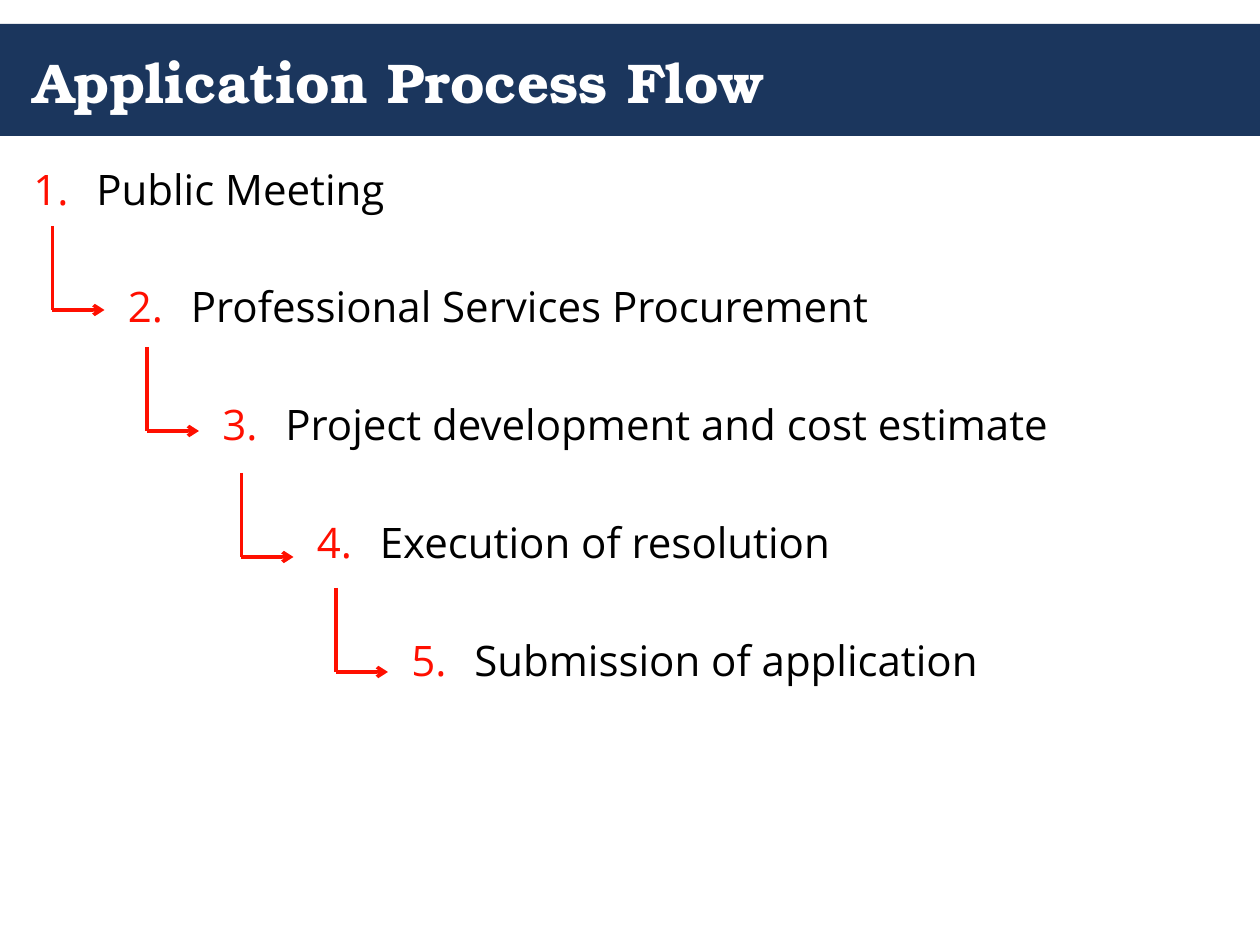
from lxml import etree
from pptx import Presentation
from pptx import util as u
from pptx.dml.color import RGBColor
from pptx.enum import shapes, text
from pptx.oxml.ns import qn

TITLE = "Application Process Flow"
STEPS = [
    "Public Meeting",
    "Professional Services Procurement",
    "Project development and cost estimate",
    "Execution of resolution",
    "Submission of application",
]
TOPS = [226, 347, 473, 588]
NAVY, RED, WHITE, BLACK = "1B365D", "FF0F00", "FFFFFF", "000000"
WIDE, HIGH = 1260, 945
STEP = 94.5
LEFT, HANG = 52.5, 63
DROP, REACH = 84, 52


def px(n):
    return u.Emu(round(n * 9144000 / WIDE))


def color(code):
    return RGBColor.from_string(code)


def add_box(slide, x, y, w, h):
    frame = slide.shapes.add_textbox(px(x), px(y), px(w), px(h)).text_frame
    frame.word_wrap = True
    return frame


def add_run(para, words, face, size, code, bold=False):
    run = para.add_run()
    run.text = words
    font = run.font
    font.name, font.size, font.bold = face, u.Pt(size), bold
    font.color.rgb = color(code)


def number(para, indent):
    props = para._p.get_or_add_pPr()
    props.set("marL", str(px(indent)))
    props.set("indent", str(-px(HANG)))
    tint = etree.SubElement(props, qn("a:buClr"))
    etree.SubElement(tint, qn("a:srgbClr"), val=RED)
    etree.SubElement(props, qn("a:buFont"), typeface="+mj-lt")
    etree.SubElement(props, qn("a:buAutoNum"), type="arabicPeriod")


def add_line(group, x1, y1, x2, y2, arrow=False):
    line = group.shapes.add_connector(
        shapes.MSO_CONNECTOR.STRAIGHT, px(x1), px(y1), px(x2), px(y2))
    line.line.color.rgb = color(RED)
    line.line.width = u.Pt(2)
    if arrow:
        etree.SubElement(line.line._get_or_add_ln(), qn("a:tailEnd"), type="arrow")
    etree.SubElement(line._element.spPr, qn("a:effectLst"))


def main():
    deck = Presentation()
    deck.slide_width, deck.slide_height = px(WIDE), px(HIGH)
    slide = deck.slides.add_slide(deck.slide_layouts[6])

    band = slide.shapes.add_shape(
        shapes.MSO_SHAPE.RECTANGLE, 0, px(24), px(WIDE), px(112))
    band.shadow.inherit = False
    band.fill.solid()
    band.fill.fore_color.rgb = color(NAVY)
    band.line.fill.background()

    head = add_box(slide, 21, 25, 1218, 113)
    head.vertical_anchor = text.MSO_ANCHOR.MIDDLE
    add_run(head.paragraphs[0], TITLE, "TeX Gyre Bonum", 32, WHITE, True)

    body = add_box(slide, 21, 157, 1218, 766)
    for i, words in enumerate(STEPS):
        para = body.add_paragraph() if i else body.paragraphs[0]
        if i:
            para.space_before = u.Pt(38.5)
        number(para, HANG + i * STEP)
        add_run(para, words, "Open Sans", 24, BLACK)

    for i, top in enumerate(TOPS):
        x, low = LEFT + i * STEP, top + DROP
        group = slide.shapes.add_group_shape()
        add_line(group, x, low, x + REACH, low, True)
        add_line(group, x, top, x, low)

    deck.save("out.pptx")


if __name__ == "__main__":
    main()
